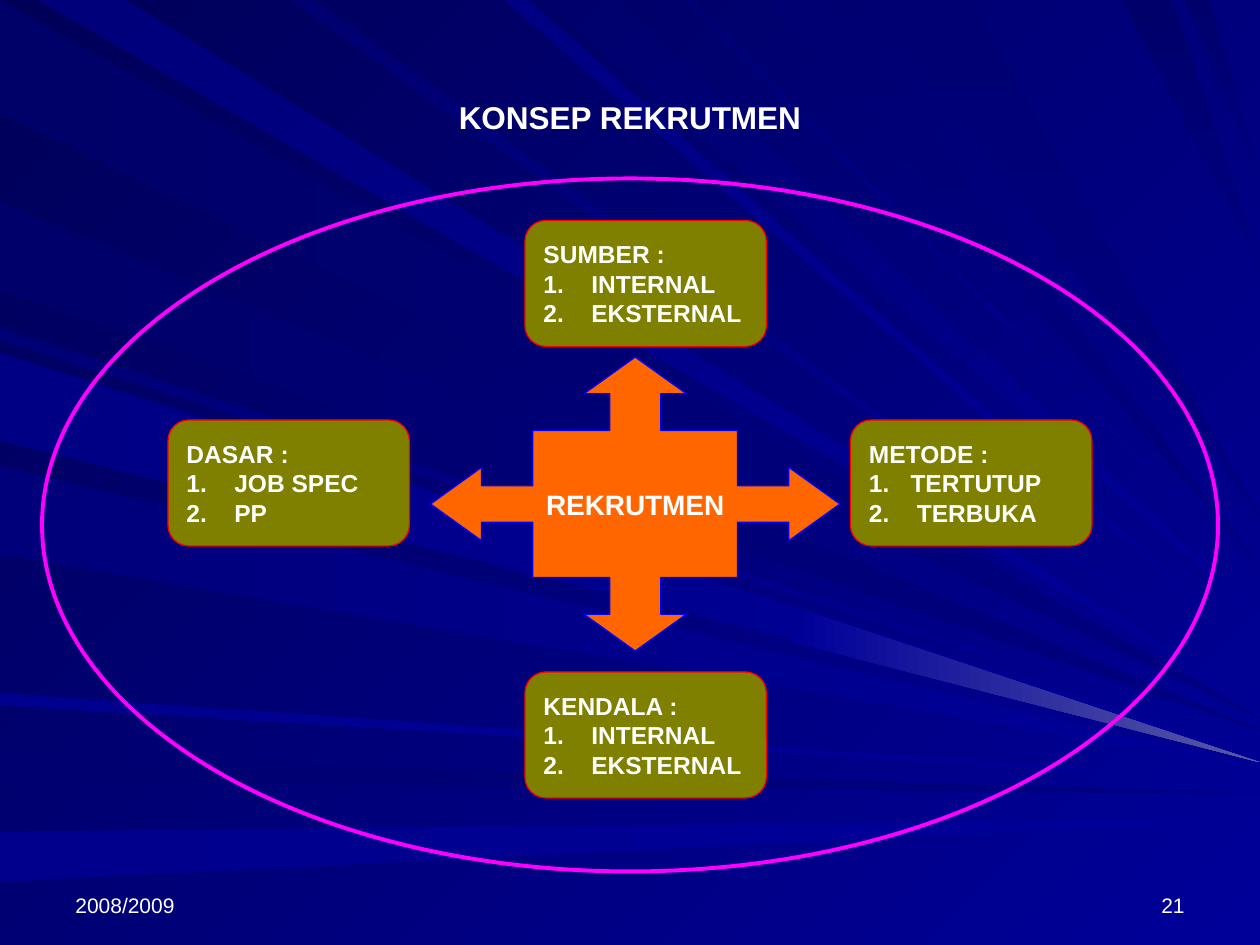
from lxml.etree import SubElement
from pptx import Presentation
from pptx.dml.color import RGBColor
from pptx.enum.shapes import MSO_SHAPE as Shape
from pptx.enum.text import MSO_ANCHOR as Anchor, PP_ALIGN as Align
from pptx.oxml.ns import qn
from pptx.util import Inches, Pt

# Content; places are in grid units, 12 to the inch
UNIT = Inches(1) // 12
FONT = "Arial"
WHITE = "FFFFFF"
DEEP, BRIGHT = "000080", "000099"
NUMBER_INDENT = 0.38

# text, place, size, bold, alignment, anchor
LABELS = [
    ("2008/2009", (6, 82, 28, 6), 12, False, Align.LEFT, Anchor.BOTTOM),
    ("21", (86, 82, 28, 6), 12, False, Align.RIGHT, Anchor.BOTTOM),
    ("KONSEP REKRUTMEN", (6, 3.6, 108, 15), 18, True, Align.CENTER, Anchor.MIDDLE),
]

# heading, left and top, numbered items with their indents in inches
CARD_SIZE = (23, 12)
CARDS = [
    ("SUMBER :", (50, 21), [("INTERNAL", NUMBER_INDENT), ("EKSTERNAL", NUMBER_INDENT)]),
    ("KENDALA :", (50, 64), [("INTERNAL", NUMBER_INDENT), ("EKSTERNAL", NUMBER_INDENT)]),
    ("METODE :", (81, 40), [("TERTUTUP", 0.33), ("TERBUKA", NUMBER_INDENT)]),
    ("DASAR :", (16, 40), [("JOB SPEC", NUMBER_INDENT), ("PP", NUMBER_INDENT)]),
]

HUB = ("REKRUTMEN", (41, 34, 39, 28))
# One arm of the hub in sixteenths of its size, around its centre
ARM = [(-4, -4), (-1, -4), (-1, -6), (-2, -6), (0, -8), (2, -6), (1, -6), (1, -4)]
RING = (4, 17, 112, 66)

# Background rays, in inches: start and end on the edge they leave,
# height where they meet the right edge, first and last colour
LEFT_RAYS = [
    (0, 0.9, 5.7, "000069", DEEP),
    (6, 6.2, 6.3, "000071", DEEP),
    (6.6, 7, 6.5, "00008C", BRIGHT),
    (2.6, 2.7, 5.9, "000076", BRIGHT),
    (1.6, 2.3, 5.8, "00006B", DEEP),
    (3.7, 4.4, 6.1, "00007B", BRIGHT),
    (5.5, 5.6, 6.2, "00008E", BRIGHT),
    (2.8, 3.5, 6, "000085", BRIGHT),
]
TOP_RAYS = [
    (0.3, 1, 5.6, "00007B", BRIGHT),
    (4, 4.2, 5.2, "000083", BRIGHT),
    (4.3, 4.9, 4.9, "00006D", BRIGHT),
    (5.4, 5.5, 4.6, "000073", BRIGHT),
    (6.1, 6.6, 4.5, "000073", DEEP),
    (8.9, 9.3, 2.1, "00006B", DEEP),
    (9.4, 9.6, 1.4, "00006D", DEEP),
    (2.3, 2.5, 5.5, "000070", BRIGHT),
    (6.9, 7.7, 4.1, "000073", DEEP),
]
GLINT = [(6.4, 4.85), (6.3, 5.1), (10, 6.05)]


def rgb(color):
    return RGBColor.from_string(color)


def grid(values):
    return [round(value * UNIT) for value in values]


def paint(fill, colors, angle=0):
    """Fill with one colour, or with a gradient at a clockwise angle."""
    if len(colors) == 1:
        fill.solid()
        fill.fore_color.rgb = rgb(colors[0])
        return
    fill.gradient()
    fill.gradient_angle = (360 - angle) % 360
    for stop, color in zip(fill.gradient_stops, colors):
        stop.color.rgb = rgb(color)


def style(shape, fill=(), line=None, width=0.75, angle=0):
    shape.shadow.inherit = False
    if fill:
        paint(shape.fill, fill, angle)
    else:
        shape.fill.background()
    if line:
        shape.line.color.rgb = rgb(line)
        shape.line.width = Pt(width)
    else:
        shape.line.fill.background()


def polygon(shapes, points):
    builder = shapes.build_freeform(*points[0])
    builder.add_line_segments(points[1:], close=True)
    return builder.convert_to_shape()


def ray(shapes, points, colors, angle):
    corners = [(Inches(x), Inches(y)) for x, y in points]
    style(polygon(shapes, corners), colors, angle=angle)


def open_frame(shape, anchor):
    frame = shape.text_frame
    frame.word_wrap = True
    frame.vertical_anchor = anchor
    return frame


def write(paragraph, text, size, bold=True, align=Align.LEFT):
    paragraph.alignment = align
    run = paragraph.add_run()
    run.text = text
    run.font.name = FONT
    run.font.size = Pt(size)
    run.font.bold = bold
    run.font.color.rgb = rgb(WHITE)


def number(paragraph, indent):
    props = paragraph._p.get_or_add_pPr()
    props.set("marL", str(Inches(indent)))
    props.set("indent", str(-Inches(indent)))
    SubElement(props, qn("a:buFont"), typeface=FONT)
    SubElement(props, qn("a:buAutoNum"), type="arabicPeriod")


def hub_outline(left, top, width, height):
    """Turn the arm a quarter four times around the hub's centre."""
    points, arm = [], ARM
    for _ in range(4):
        points += arm
        arm = [(-y, x) for x, y in arm]
    return [(round(left + width * (8 + x) / 16), round(top + height * (8 + y) / 16))
            for x, y in points]


def main():
    deck = Presentation()
    deck.slide_width, deck.slide_height = Inches(10), Inches(7.5)
    slide = deck.slides.add_slide(deck.slide_layouts[6])
    shapes = slide.shapes

    # Background
    paint(slide.background.fill, (DEEP[:4] + "58", BRIGHT), 45)
    for start, end, tip, *colors in TOP_RAYS:
        angle = 90 if DEEP in colors else 45
        ray(shapes, [(start, 0), (end, 0), (10, tip)], colors, angle)
    for start, end, tip, *colors in LEFT_RAYS:
        ray(shapes, [(0, start), (0, end), (10, tip)], colors, 0)
    ray(shapes, GLINT, (BRIGHT, "5A5AA6"), 0)

    # Title, date and slide number
    for text, place, size, bold, align, anchor in LABELS:
        frame = open_frame(shapes.add_textbox(*grid(place)), anchor)
        write(frame.paragraphs[0], text, size, bold, align)

    # Cards
    for heading, corner, items in CARDS:
        card = shapes.add_shape(Shape.ROUNDED_RECTANGLE, *grid(corner + CARD_SIZE))
        style(card, ["808000"], "FF0000")
        frame = open_frame(card, Anchor.MIDDLE)
        write(frame.paragraphs[0], heading, 14)
        for item, indent in items:
            paragraph = frame.add_paragraph()
            write(paragraph, item, 14)
            number(paragraph, indent)

    # Four-way arrow hub
    text, place = HUB
    hub = polygon(shapes, hub_outline(*grid(place)))
    style(hub, ["FF6600"], "0000FF")
    write(open_frame(hub, Anchor.MIDDLE).paragraphs[0], text, 16, align=Align.CENTER)

    # Ring around the concept
    style(shapes.add_shape(Shape.OVAL, *grid(RING)), line="FF00FF", width=2.25)

    deck.save("out.pptx")


if __name__ == "__main__":
    main()
